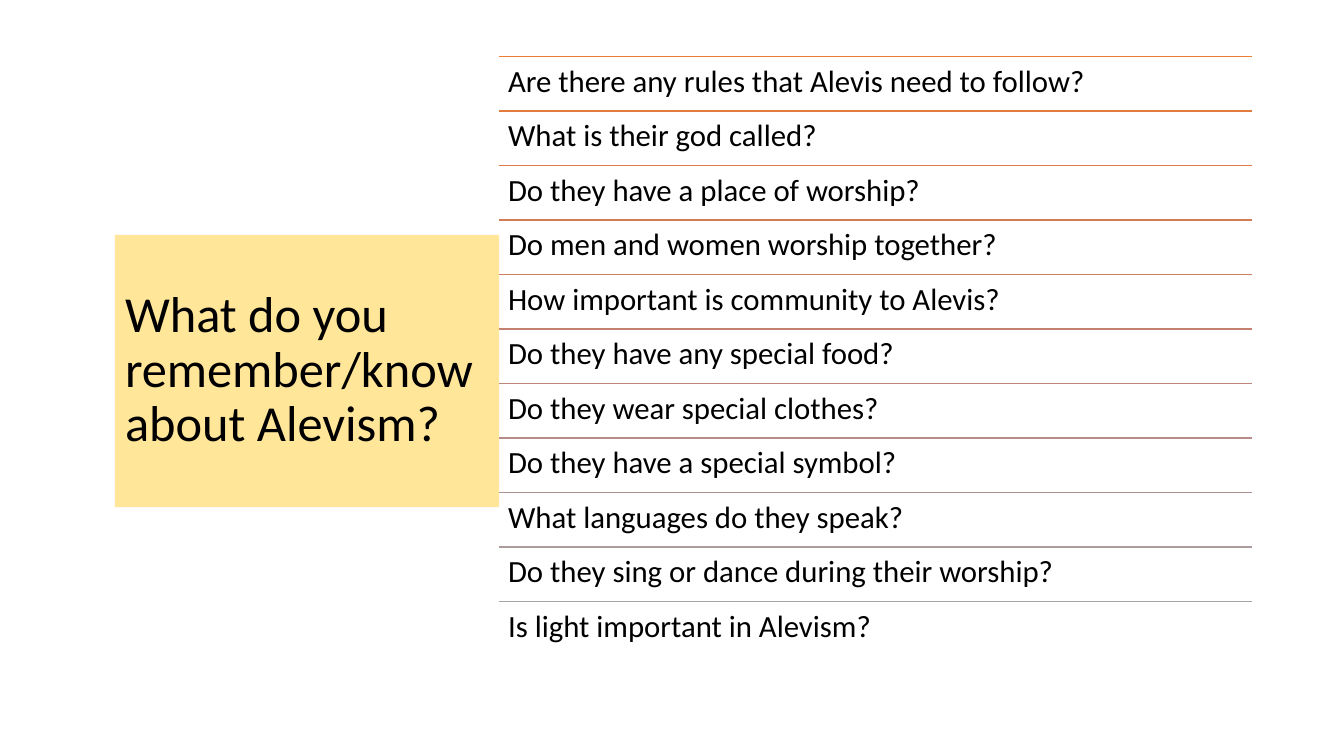
from colorsys import hls_to_rgb, rgb_to_hls
from dataclasses import dataclass

from lxml.etree import SubElement
from pptx import Presentation
from pptx.dml.color import RGBColor
from pptx.enum.shapes import MSO_CONNECTOR
from pptx.enum.text import MSO_ANCHOR, MSO_AUTO_SIZE, PP_ALIGN
from pptx.oxml.ns import qn
from pptx.util import Inches, Pt


@dataclass(frozen=True)
class Theme:
    font: str = "Calibri"
    text: str = "000000"
    panel: str = "FFE699"
    rule_first: str = "ED7D31"
    rule_last: str = "A5A5A5"
    title_size: int = 36
    row_size: int = 22
    rule_width: int = 1
    row_inset: float = 0.09

    def rule_color(self, share):
        """Blend the first and last rule colours by hue, lightness and saturation."""
        first, last = (rgb_to_hls(*(v / 255 for v in RGBColor.from_string(c)))
                       for c in (self.rule_first, self.rule_last))
        blend = (a + (b - a) * share for a, b in zip(first, last))
        return RGBColor(*(round(v * 255) for v in hls_to_rgb(*blend)))


class SlideBuilder:
    """Places elements on a slide; lengths are percentages of its size."""

    def __init__(self, prs, theme):
        self.prs, self.theme = prs, theme
        self.s = prs.slides.add_slide(prs.slide_layouts[5])  # Title Only

    def x(self, share):
        return round(self.prs.slide_width * share / 100)

    def y(self, share):
        return round(self.prs.slide_height * share / 100)

    def set_text(self, tf, text, size, anchor):
        tf.text = text
        tf.word_wrap = True
        tf.auto_size = MSO_AUTO_SIZE.NONE
        tf.vertical_anchor = anchor
        p = tf.paragraphs[0]
        p.alignment = PP_ALIGN.LEFT
        p.line_spacing = 0.9
        r = p.runs[0]
        r.font.name = self.theme.font
        r.font.size = Pt(size)
        r.font.color.rgb = RGBColor.from_string(self.theme.text)

    def title(self, text, left, top, width, height):
        sp = self.s.shapes.title
        sp.left, sp.top = self.x(left), self.y(top)
        sp.width, sp.height = self.x(width), self.y(height)
        sp.fill.solid()
        sp.fill.fore_color.rgb = RGBColor.from_string(self.theme.panel)
        self.set_text(sp.text_frame, text, self.theme.title_size, MSO_ANCHOR.MIDDLE)

    def rule(self, left, top, width, color):
        line = self.s.shapes.add_connector(
            MSO_CONNECTOR.STRAIGHT,
            self.x(left), self.y(top), self.x(left + width), self.y(top))
        line.line.color.rgb = color
        line.line.width = Pt(self.theme.rule_width)
        SubElement(line._element.spPr, qn("a:effectLst"))

    def row_text(self, text, left, top, width, height):
        sp = self.s.shapes.add_textbox(
            self.x(left), self.y(top), self.x(width), self.y(height))
        tf = sp.text_frame
        inset = Inches(self.theme.row_inset)
        tf.margin_left = tf.margin_right = tf.margin_top = tf.margin_bottom = inset
        self.set_text(tf, text, self.theme.row_size, MSO_ANCHOR.TOP)

    def ruled_list(self, items, left, top, width, height):
        pitch = height / len(items)
        for i, item in enumerate(items):
            row_top = top + i * pitch
            self.rule(left, row_top, width,
                      self.theme.rule_color(i / (len(items) - 1)))
            self.row_text(item, left, row_top, width, pitch)


QUESTIONS = [
    "Are there any rules that Alevis need to follow?",
    "What is their god called?",
    "Do they have a place of worship?",
    "Do men and women worship together?",
    "How important is community to Alevis?",
    "Do they have any special food?",
    "Do they wear special clothes?",
    "Do they have a special symbol?",
    "What languages do they speak?",
    "Do they sing or dance during their worship?",
    "Is light important in Alevism?",
]


def main():
    prs = Presentation()
    prs.slide_width, prs.slide_height = Inches(13.33), Inches(7.5)
    slide = SlideBuilder(prs, Theme())

    # Heading panel on the left
    slide.title("What do you remember/know about Alevism?",
                left=8.55, top=31.07, width=28.58, height=36)

    # Questions on the right, one ruled row each
    slide.ruled_list(QUESTIONS, left=37.13, top=7.47, width=56.04, height=79.33)

    prs.save("out.pptx")


if __name__ == "__main__":
    main()
